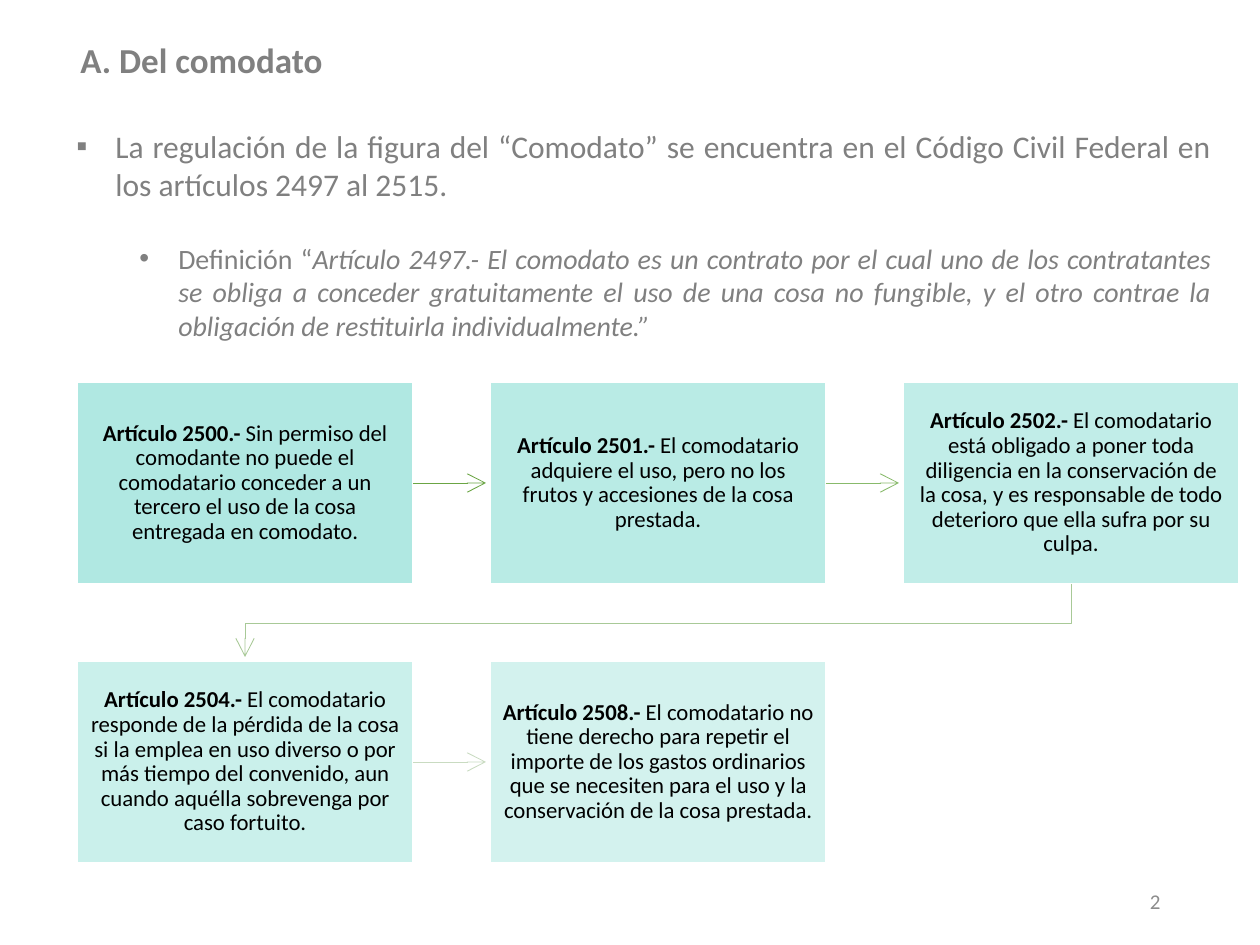
"""Build the slide on the loan for use (comodato) with its chain of articles."""
from lxml import etree
from pptx import Presentation
from pptx.dml.color import RGBColor
from pptx.enum.shapes import MSO_CONNECTOR, MSO_SHAPE
from pptx.enum.text import MSO_ANCHOR, PP_ALIGN
from pptx.oxml.ns import qn
from pptx.util import Emu, Pt

LEFT, CENTER, RIGHT, JUSTIFY = PP_ALIGN.LEFT, PP_ALIGN.CENTER, PP_ALIGN.RIGHT, PP_ALIGN.JUSTIFY
TOP, MIDDLE = MSO_ANCHOR.TOP, MSO_ANCHOR.MIDDLE
RECTANGLE, STRAIGHT = MSO_SHAPE.RECTANGLE, MSO_CONNECTOR.STRAIGHT

EMU_PER_PX = 914400 / 126
FONT = "Calibri"
GRAY, BLACK, WHITE, TEAL = "808080", "000000", "FFFFFF", "A8E6DF"

TITLE = "A. Del comodato"
PAGE_NUMBER = "2"
RULE = (
    "La regulación de la figura del “Comodato” se encuentra en el Código Civil "
    "Federal en los artículos 2497 al 2515."
)
DEFINITION_LABEL = "Definición “"
DEFINITION = (
    "Artículo 2497.- El comodato es un contrato por el cual uno de los contratantes "
    "se obliga a conceder gratuitamente el uso de una cosa no fungible, y el otro "
    "contrae la obligación de restituirla individualmente.”"
)
ARTICLES = [
    ("Artículo 2500.- ", "Sin permiso del comodante no puede el comodatario conceder "
     "a un tercero el uso de la cosa entregada en comodato."),
    ("Artículo 2501.- ", "El comodatario adquiere el uso, pero no los frutos y "
     "accesiones de la cosa prestada."),
    ("Artículo 2502.- ", "El comodatario está obligado a poner toda diligencia en la "
     "conservación de la cosa, y es responsable de todo deterioro que ella sufra por su culpa."),
    ("Artículo 2504.- ", "El comodatario responde de la pérdida de la cosa si la emplea en "
     "uso diverso o por más tiempo del convenido, aun cuando aquélla sobrevenga por caso fortuito."),
    ("Artículo 2508.- ", "El comodatario no tiene derecho para repetir el importe de los "
     "gastos ordinarios que se necesiten para el uso y la conservación de la cosa prestada."),
]
ARROW_COLORS = ["6BA544", "88BA6B", "A8C997", "C9DBC1"]

COLUMNS = 3
GRID_LEFT, GRID_TOP = 77, 382
BOX_WIDTH, BOX_HEIGHT = 336, 202
COLUMN_STEP, ROW_STEP = 413, 279
ARROW_GAP, ELBOW_DROP = 4, 39


def px(length):
    return Emu(round(length * EMU_PER_PX))


def color(value):
    return RGBColor.from_string(value)


def add_run(paragraph, text, size, value, bold=False, italic=False):
    run = paragraph.add_run()
    run.text = text
    run.font.name, run.font.size = FONT, Pt(size)
    run.font.bold, run.font.italic = bold, italic
    run.font.color.rgb = color(value)


def add_text_box(slide, left, top, width, height, alignment=LEFT, anchor=TOP):
    frame = slide.shapes.add_textbox(px(left), px(top), px(width), px(height)).text_frame
    frame.word_wrap, frame.vertical_anchor = True, anchor
    frame.paragraphs[0].alignment = alignment
    return frame


def add_bullet(paragraph, character, left, hanging):
    properties = paragraph._p.get_or_add_pPr()
    properties.set("marL", str(px(left)))
    properties.set("indent", str(-px(hanging)))
    etree.SubElement(properties, qn("a:buFont"), typeface="Arial")
    etree.SubElement(properties, qn("a:buChar"), char=character)


def style_arrow(shape, value):
    shape.line.color.rgb, shape.line.width = color(value), Pt(0.5)
    etree.SubElement(shape.line._get_or_add_ln(), qn("a:tailEnd"), type="arrow", w="lg", len="lg")


def box_position(index):
    row, column = divmod(index, COLUMNS)
    return GRID_LEFT + column * COLUMN_STEP, GRID_TOP + row * ROW_STEP


def add_article(slide, index, heading, body):
    left, top = box_position(index)
    box = slide.shapes.add_shape(RECTANGLE, px(left), px(top), px(BOX_WIDTH), px(BOX_HEIGHT))
    box.shadow.inherit = False
    box.fill.solid()
    box.fill.fore_color.rgb = color(TEAL)
    fill_color = box._element.spPr.find(qn("a:solidFill"))[0]
    etree.SubElement(fill_color, qn("a:alpha"), val=str((90 - 10 * index) * 1000))
    box.line.color.rgb, box.line.width = color(WHITE), Pt(1)
    frame = box.text_frame
    frame.word_wrap, frame.vertical_anchor = True, MIDDLE
    frame.margin_left = frame.margin_right = frame.margin_top = frame.margin_bottom = px(12)
    paragraph = frame.paragraphs[0]
    paragraph.alignment, paragraph.line_spacing = CENTER, 0.9
    add_run(paragraph, heading, 13, BLACK, bold=True)
    add_run(paragraph, body, 13, BLACK)


def add_arrow(slide, index, value):
    left, top = box_position(index)
    next_left, next_top = box_position(index + 1)
    if top == next_top:
        middle = px(top + BOX_HEIGHT / 2)
        arrow = slide.shapes.add_connector(
            STRAIGHT, px(left + BOX_WIDTH), middle, px(next_left - ARROW_GAP), middle)
        style_arrow(arrow, value)
        etree.SubElement(arrow._element.spPr, qn("a:effectLst"))
        return
    start, end = left + BOX_WIDTH / 2, next_left + BOX_WIDTH / 2
    bottom = top + BOX_HEIGHT
    turn = bottom + ELBOW_DROP
    builder = slide.shapes.build_freeform(start, bottom, scale=EMU_PER_PX)
    builder.add_line_segments(
        [(start, turn), (end, turn), (end, next_top - ARROW_GAP)], close=False)
    elbow = builder.convert_to_shape()
    elbow.shadow.inherit = False
    elbow.fill.background()
    style_arrow(elbow, value)


def main():
    presentation = Presentation()
    presentation.slide_width, presentation.slide_height = px(1260), px(945)
    slide = presentation.slides.add_slide(presentation.slide_layouts[6])

    number = add_text_box(slide, 890, 876, 283, 50, RIGHT, MIDDLE)
    add_run(number.paragraphs[0], PAGE_NUMBER, 12, "8C8C8C")

    body = add_text_box(slide, 64, 121, 1160, 240, JUSTIFY)
    rule = body.paragraphs[0]
    add_bullet(rule, "▪", 39, 39)
    add_run(rule, RULE, 18, GRAY)
    definition = body.add_paragraph()
    definition.alignment, definition.level = JUSTIFY, 1
    definition.space_before = Pt(22)
    add_bullet(definition, "•", 102, 39)
    add_run(definition, DEFINITION_LABEL, 16, GRAY)
    add_run(definition, DEFINITION, 16, GRAY, italic=True)

    title = add_text_box(slide, 68, 32, 1048, 55)
    add_run(title.paragraphs[0], TITLE, 20, GRAY, bold=True)

    for index, (heading, text) in enumerate(ARTICLES):
        add_article(slide, index, heading, text)
    for index, value in enumerate(ARROW_COLORS):
        add_arrow(slide, index, value)

    presentation.save("out.pptx")


if __name__ == "__main__":
    main()
